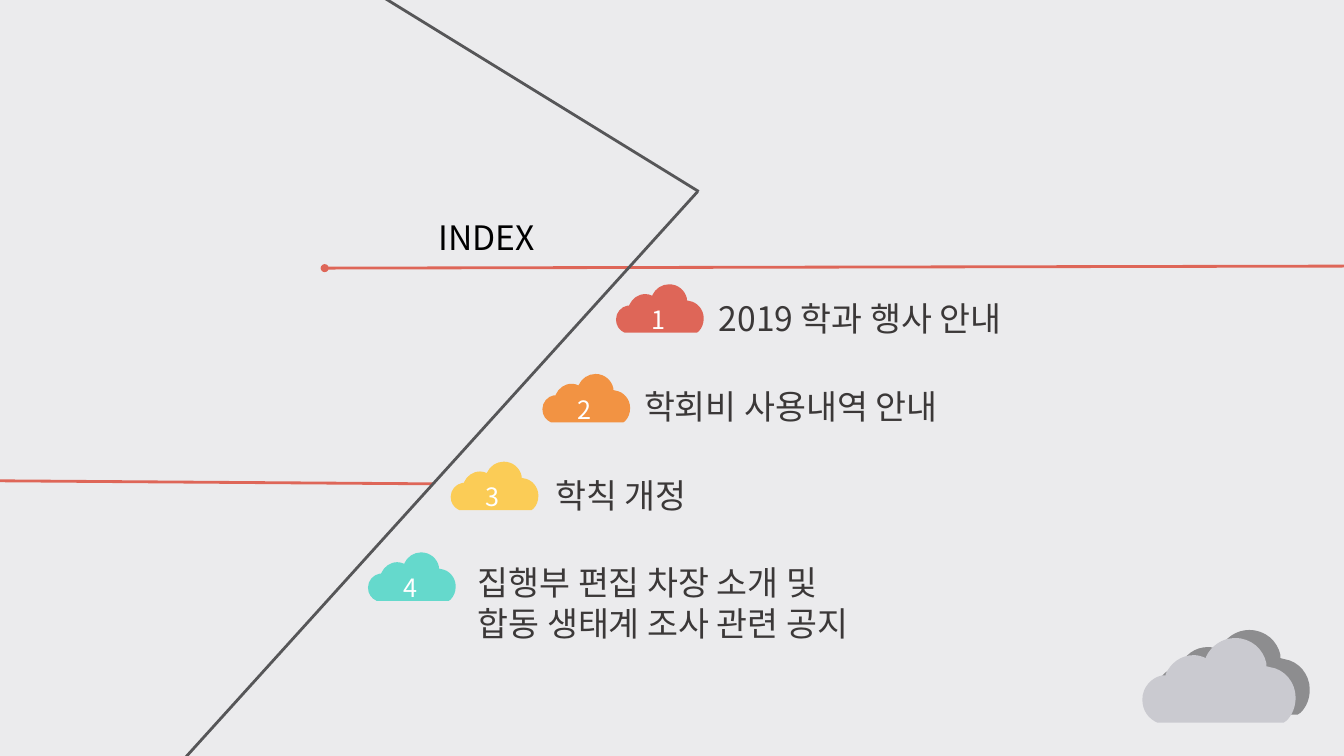
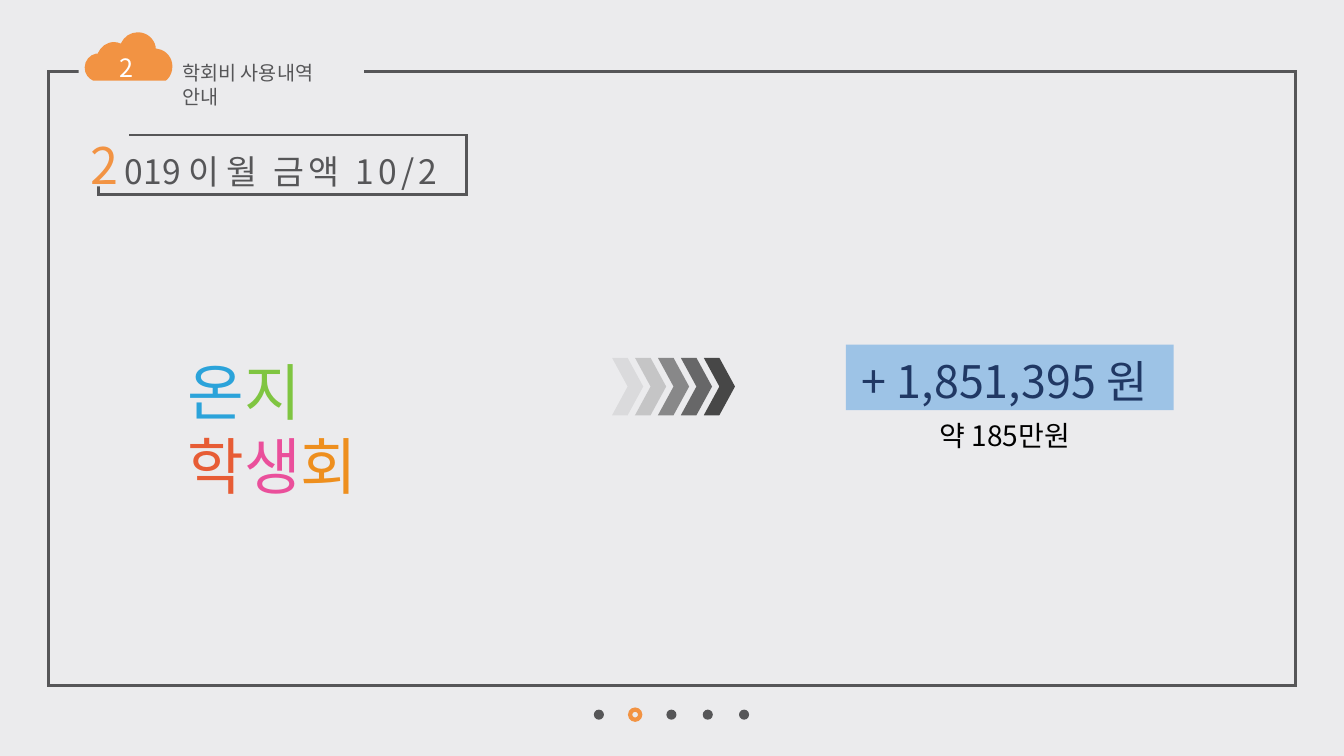
from dataclasses import dataclass

from lxml.etree import SubElement
from pptx import Presentation
from pptx.dml.color import RGBColor
from pptx.enum.shapes import MSO_CONNECTOR, MSO_SHAPE
from pptx.enum.text import MSO_AUTO_SIZE, PP_ALIGN
from pptx.oxml.ns import qn
from pptx.util import Inches, Pt

FONT = "Noto Sans CJK KR"
COLORS = {
    "background": "EBEBED",
    "frame": "565658",
    "red": "DE6658",
    "orange": "F29343",
    "yellow": "FBCC56",
    "teal": "65D9CC",
    "dark": "3B3838",
    "black": "000000",
    "white": "FFFFFF",
    "cloud_back": "8D8D8F",
    "cloud_front": "CACAD0",
    "chevron": "474747",
    "highlight": "9DC3E6",
    "navy": "203864",
    "letter_blue": "2BA3DA",
    "letter_green": "7FC541",
    "letter_red": "E75C35",
    "letter_pink": "EA4F9B",
    "letter_orange": "EE8F1E",
}
CLOUD_WIDTH = 1.52
SMALL_CLOUD_WIDTH = 0.87
CLOUD_START = (0.92, 0)
CLOUD_SEGMENTS = [
    [(1.08, 0), (1.2, 0.11), (1.23, 0.25)],
    [(1.23, 0.28)],
    [(1.27, 0.29)],
    [(1.41, 0.31), (1.52, 0.44), (1.52, 0.59)],
    [(1.52, 0.68), (1.49, 0.76), (1.43, 0.82)],
    [(1.4, 0.84)],
    [(0.16, 0.84)],
    [(0.15, 0.84)],
    [(0.06, 0.8), (0, 0.72), (0, 0.61)],
    [(0, 0.49), (0.09, 0.39), (0.2, 0.37)],
    [(0.23, 0.37)],
    [(0.23, 0.36)],
    [(0.28, 0.25), (0.38, 0.17), (0.51, 0.17)],
    [(0.55, 0.17), (0.59, 0.18), (0.63, 0.2)],
    [(0.63, 0.2)],
    [(0.63, 0.19)],
    [(0.68, 0.08), (0.79, 0), (0.92, 0)],
]


@dataclass
class Span:
    text: str
    size: float
    color: str
    spacing: float = 0


@dataclass
class IndexEntry:
    number: str
    color: str
    cloud: tuple[float, float]
    label: tuple[float, float, float, float]
    lines: list[str]


ENTRIES = [
    IndexEntry("1", "red", (6.11, 2.82), (7.03, 2.91, 3.31, 0.5), ["2019 학과 행사 안내"]),
    IndexEntry("2", "orange", (5.38, 3.71), (6.29, 3.78, 3.5, 0.5), ["학회비 사용내역 안내"]),
    IndexEntry("3", "yellow", (4.47, 4.58), (5.41, 4.66, 2.12, 0.5), ["학칙 개정"]),
    IndexEntry("4", "teal", (3.65, 5.48), (4.64, 5.53, 4.4, 0.91),
               ["집행부 편집 차장 소개 및", "합동 생태계 조사 관련 공지"]),
]


def rgb(name: str) -> RGBColor:
    return RGBColor.from_string(COLORS[name])


def add_page(deck):
    page = deck.slides.add_slide(deck.slide_layouts[6])
    page.background.fill.solid()
    page.background.fill.fore_color.rgb = rgb("background")
    return page


def paint(shape, fill: str | None, line: str | None = None, weight: float = 2) -> None:
    shape.shadow.inherit = False
    if fill:
        shape.fill.solid()
        shape.fill.fore_color.rgb = rgb(fill)
    else:
        shape.fill.background()
    if line:
        shape.line.color.rgb = rgb(line)
        shape.line.width = Pt(weight)
        outline = shape._element.spPr.find(qn("a:ln"))
        SubElement(outline, qn("a:miter")).set("lim", "800000")
    else:
        shape.line.fill.background()


def add_figure(page, kind, left: float, top: float, width: float, height: float,
               fill: str | None, line: str | None = None, weight: float = 2):
    shape = page.shapes.add_shape(
        kind, Inches(left), Inches(top), Inches(width), Inches(height))
    paint(shape, fill, line, weight)
    return shape


def add_line(page, start: tuple[float, float], end: tuple[float, float], color: str) -> None:
    line = page.shapes.add_connector(
        MSO_CONNECTOR.STRAIGHT, *(Inches(value) for value in start + end))
    line.line.color.rgb = rgb(color)
    line.line.width = Pt(2)
    SubElement(line._element.spPr, qn("a:effectLst"))


def style_font(font, span: Span) -> None:
    font.name = FONT
    font.size = Pt(span.size)
    font.color.rgb = rgb(span.color)
    if span.spacing:
        font._element.set("spc", str(int(span.spacing * 100)))


def add_text(page, area: tuple[float, float, float, float], lines: list[list[Span]],
             align=PP_ALIGN.LEFT) -> None:
    box = page.shapes.add_textbox(*(Inches(value) for value in area))
    frame = box.text_frame
    frame.word_wrap = True
    frame.auto_size = MSO_AUTO_SIZE.SHAPE_TO_FIT_TEXT
    for index, spans in enumerate(lines):
        para = frame.add_paragraph() if index else frame.paragraphs[0]
        para.alignment = align
        if len(spans) == 1:
            style_font(para.font, spans[0])
        for span in spans:
            run = para.add_run()
            run.text = span.text
            if len(spans) > 1:
                style_font(run.font, span)


def bend_cloud(outline) -> None:
    steps = iter(outline.findall(qn("a:lnTo")))
    for segment in CLOUD_SEGMENTS:
        first = next(steps)
        if len(segment) == 3:
            curve = SubElement(outline, qn("a:cubicBezTo"))
            first.addprevious(curve)
            for step in (first, next(steps), next(steps)):
                curve.append(step[0])
                outline.remove(step)


def add_cloud(page, left: float, top: float, width: float, color: str) -> None:
    scale = width / CLOUD_WIDTH
    corners = [CLOUD_START] + [corner for segment in CLOUD_SEGMENTS for corner in segment]
    points = [(Inches(left + x * scale), Inches(top + y * scale)) for x, y in corners]
    builder = page.shapes.build_freeform(*points[0])
    builder.add_line_segments(points[1:], close=True)
    cloud = builder.convert_to_shape()
    bend_cloud(next(cloud._element.iter(qn("a:path"))))
    paint(cloud, color)


def add_numbered_cloud(page, left: float, top: float, number: str, color: str) -> None:
    add_cloud(page, left, top, SMALL_CLOUD_WIDTH, color)
    add_text(page, (left + 0.25, top + 0.15, 0.37, 0.4), [[Span(number, 18, "white")]])


def build_index(deck) -> None:
    page = add_page(deck)
    add_line(page, (3.22, 2.66), (13.33, 2.64), "red")
    add_line(page, (3.65, -0.12), (6.93, 1.9), "frame")
    add_line(page, (-0.03, 4.77), (4.3, 4.8), "red")
    add_line(page, (1.78, 7.58), (6.92, 1.9), "frame")
    add_figure(page, MSO_SHAPE.OVAL, 3.18, 2.62, 0.08, 0.08, "red")
    add_text(page, (4.25, 2.1, 1.33, 0.5), [[Span("INDEX", 24, "black")]])
    for entry in ENTRIES:
        add_numbered_cloud(page, *entry.cloud, entry.number, entry.color)
        add_text(page, entry.label, [[Span(line, 24, "dark")] for line in entry.lines])
    add_cloud(page, 11.47, 6.25, CLOUD_WIDTH, "cloud_back")
    add_cloud(page, 11.33, 6.33, CLOUD_WIDTH, "cloud_front")


def add_page_dots(page, current: int, count: int = 5) -> None:
    for index in range(count):
        left = 5.89 + index * 0.36
        if index == current:
            add_figure(page, MSO_SHAPE.OVAL, left, 7.04, 0.1, 0.1, None, "orange", 3)
        else:
            add_figure(page, MSO_SHAPE.OVAL, left, 7.04, 0.1, 0.1, "frame")


def add_chevrons(page) -> None:
    gap = (6.98 - 6.07) / 4
    for index, opacity in enumerate((10, 23, 60, 80, 100)):
        chevron = add_figure(
            page, MSO_SHAPE.CHEVRON, 6.07 + index * gap, 3.55, 0.31, 0.57, "chevron")
        color = chevron._element.spPr.find(qn("a:solidFill")).find(qn("a:srgbClr"))
        if opacity < 100:
            SubElement(color, qn("a:alpha")).set("val", str(opacity * 1000))


def build_carryover(deck) -> None:
    page = add_page(deck)
    add_figure(page, MSO_SHAPE.RECTANGLE, 0.48, 0.71, 12.37, 6.09, None, "frame")
    add_page_dots(page, current=1)
    add_figure(page, MSO_SHAPE.RECTANGLE, 0.78, 0.57, 2.83, 0.29, "background")
    add_text(page, (1.71, 0.56, 1.85, 0.34), [[Span("학회비 사용내역 안내", 14, "frame")]])
    add_numbered_cloud(page, 0.84, 0.32, "2", "orange")
    add_chevrons(page)

    add_figure(page, MSO_SHAPE.RECTANGLE, 0.98, 1.34, 3.65, 0.59, None, "frame")
    add_figure(page, MSO_SHAPE.RECTANGLE, 0.62, 1.3, 0.66, 0.55, "background")
    add_text(page, (0.8, 1.28, 3.91, 0.71), [[
        Span("2", 36, "orange"),
        Span(" ", 20, "frame"),
        Span("019 이 ", 24, "frame"),
        Span("월 금액 10/2", 24, "frame", 3),
    ]])

    add_figure(page, MSO_SHAPE.RECTANGLE, 8.39, 3.42, 3.25, 0.65, "highlight")
    add_text(page, (8.3, 3.46, 3.33, 0.64), [[Span("+ 1,851,395 원", 32, "navy")]],
             PP_ALIGN.CENTER)
    add_text(page, (9.2, 4.1, 1.53, 0.44), [[Span("약 185만원", 20, "black")]],
             PP_ALIGN.CENTER)
    add_text(page, (1.76, 3.46, 3, 0.84), [[
        Span("온", 44, "letter_blue"),
        Span("지 ", 44, "letter_green"),
        Span("학", 44, "letter_red"),
        Span("생", 44, "letter_pink"),
        Span("회", 44, "letter_orange"),
    ]])


def main() -> None:
    deck = Presentation()
    deck.slide_width = Inches(13.33)
    deck.slide_height = Inches(7.5)
    build_index(deck)
    build_carryover(deck)
    deck.save("out.pptx")


if __name__ == "__main__":
    main()
